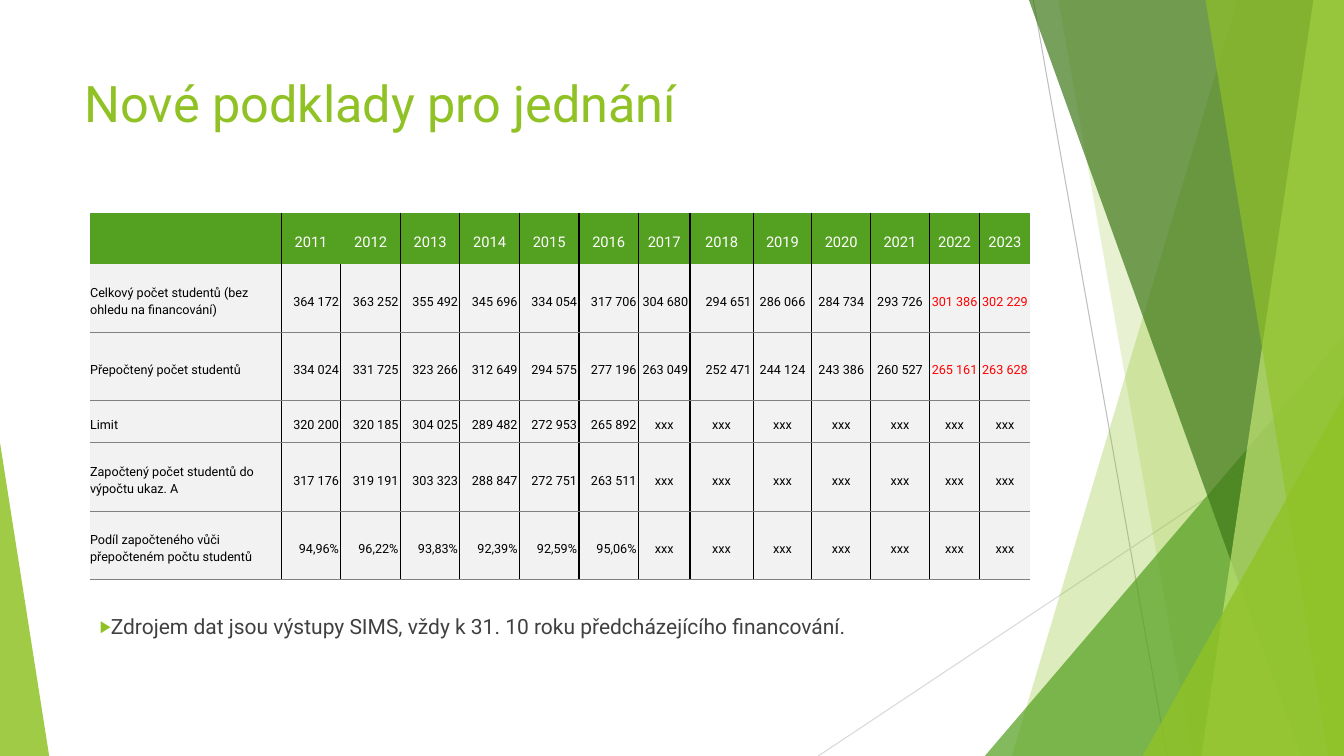
from lxml import etree
from pptx import Presentation
from pptx.dml.color import RGBColor
from pptx.enum.shapes import MSO_CONNECTOR, MSO_SHAPE
from pptx.enum.text import MSO_ANCHOR, MSO_AUTO_SIZE, PP_ALIGN
from pptx.oxml.ns import qn
from pptx.util import Cm, Pt

STRAIGHT = MSO_CONNECTOR.STRAIGHT
TRIANGLE = MSO_SHAPE.ISOSCELES_TRIANGLE
TOP, MIDDLE = MSO_ANCHOR.TOP, MSO_ANCHOR.MIDDLE
NO_AUTOSIZE = MSO_AUTO_SIZE.NONE
LEFT, CENTER, RIGHT = PP_ALIGN.LEFT, PP_ALIGN.CENTER, PP_ALIGN.RIGHT

FONT = "Roboto"
LIME, GREEN, DARK_GREEN, PALE_GREEN = "90C226", "54A021", "3F7819", "C0E474"
BLACK, RED, WHITE, GRAY, LIGHT_GRAY = "000000", "FF0000", "FFFFFF", "808080", "F2F2F2"
NO_GRID_STYLE = "{2D5ABB26-0587-4C30-8999-92F81FD0307C}"
SLIDE_WIDTH, SLIDE_HEIGHT = 33.87, 19.05

TITLE = "Nové podklady pro jednání"
SOURCE_NOTE = "Zdrojem dat jsou výstupy SIMS, vždy k 31. 10 roku předcházejícího financování."

YEARS = list(range(2011, 2024))
NOT_GIVEN = ["xxx"] * 7
STUDENT_ROWS = [
    ("Celkový počet studentů (bez ohledu na financování)",
     ["364 172", "363 252", "355 492", "345 696", "334 054", "317 706", "304 680",
      "294 651", "286 066", "284 734", "293 726", "301 386", "302 229"]),
    ("Přepočtený počet studentů",
     ["334 024", "331 725", "323 266", "312 649", "294 575", "277 196", "263 049",
      "252 471", "244 124", "243 386", "260 527", "265 161", "263 628"]),
    ("Limit",
     ["320 200", "320 185", "304 025", "289 482", "272 953", "265 892"] + NOT_GIVEN),
    ("Započtený počet studentů do výpočtu ukaz. A",
     ["317 176", "319 191", "303 323", "288 847", "272 751", "263 511"] + NOT_GIVEN),
    ("Podíl započteného vůči přepočteném počtu studentů",
     ["94,96%", "96,22%", "93,83%", "92,39%", "92,59%", "95,06%"] + NOT_GIVEN),
]
COLUMN_WIDTHS = [4.82] + [1.5] * 6 + [1.3, 1.59] + [1.48] * 3 + [1.27] * 2
ROW_HEIGHTS = [1.28, 1.72, 1.73, 1.06, 1.72, 1.72]
TABLE_LEFT, TABLE_TOP = 2.27, 5.37

# Start x, start y, end x, end y, colour
THIN_LINES = [
    (26.04, 0, 29.41, SLIDE_HEIGHT, "BFBFBF"),
    (SLIDE_WIDTH, 10.24, 20.62, SLIDE_HEIGHT, "D9D9D9"),
]
# Bands run to the right edge: (top x, bottom x).
# Wedges stand on the bottom edge: (left, top, right, apex position).
DECORATIONS = [
    ("band", (31.19, 25.5), LIME, 30),
    ("band", (26.67, 30.05), LIME, 20),
    ("wedge", (24.82, 8.46, SLIDE_WIDTH, 1), GREEN, 72),
    ("band", (25.93, 32.79), DARK_GREEN, 70),
    ("band", (33.1, 30.28), PALE_GREEN, 70),
    ("band", (30.38, 33.48), LIME, 65),
    ("wedge", (28.8, 9.98, SLIDE_WIDTH, 1), LIME, 80),
    ("wedge", (0, 11.15, 1.24, 0), LIME, 85),
]


def rgb(value):
    return RGBColor.from_string(value)


def format_runs(paragraph, size, color):
    for run in paragraph.runs:
        run.font.name = FONT
        run.font.size = Pt(size)
        run.font.color.rgb = rgb(color)


def add_line(shapes, x1, y1, x2, y2, color):
    line = shapes.add_connector(STRAIGHT, Cm(x1), Cm(y1), Cm(x2), Cm(y2))
    line.line.color.rgb = rgb(color)
    line.line.width = Pt(0.75)
    etree.SubElement(line._element.spPr, qn("a:effectLst"))


def add_band(shapes, top_x, bottom_x):
    builder = shapes.build_freeform(Cm(top_x), 0)
    corners = [(SLIDE_WIDTH, 0), (SLIDE_WIDTH, SLIDE_HEIGHT), (bottom_x, SLIDE_HEIGHT)]
    builder.add_line_segments([(Cm(x), Cm(y)) for x, y in corners], close=True)
    return builder.convert_to_shape()


def add_wedge(shapes, left, top, right, apex):
    wedge = shapes.add_shape(TRIANGLE, Cm(left), Cm(top),
                             Cm(right - left), Cm(SLIDE_HEIGHT - top))
    wedge.adjustments[0] = apex
    return wedge


def add_decoration(shapes, kind, geometry, color, opacity):
    shape = {"band": add_band, "wedge": add_wedge}[kind](shapes, *geometry)
    shape.shadow.inherit = False
    shape.line.fill.background()
    shape.fill.solid()
    shape.fill.fore_color.rgb = rgb(color)
    color_element = shape._element.spPr.find(qn("a:solidFill"))[0]
    etree.SubElement(color_element, qn("a:alpha"), val=str(opacity * 1000))


def place_placeholder(placeholder, left, top, width, height, text, size, color):
    placeholder.left, placeholder.top = Cm(left), Cm(top)
    placeholder.width, placeholder.height = Cm(width), Cm(height)
    frame = placeholder.text_frame
    frame.text = text
    frame.word_wrap = True
    frame.auto_size = NO_AUTOSIZE
    frame.vertical_anchor = TOP
    paragraph = frame.paragraphs[0]
    paragraph.alignment = LEFT
    format_runs(paragraph, size, color)
    return paragraph


def set_bullet(paragraph, character, color, percent):
    properties = paragraph._p.get_or_add_pPr()
    properties.set("marL", "0")
    properties.set("indent", "0")
    bullet_color = etree.SubElement(properties, qn("a:buClr"))
    etree.SubElement(bullet_color, qn("a:srgbClr"), val=color)
    etree.SubElement(properties, qn("a:buSzPct"), val=str(percent * 1000))
    etree.SubElement(properties, qn("a:buChar"), char=character)


def set_border(cell, side, width, color):
    """Draw one side (L, R, T or B) of a cell; no colour means no line."""
    border = etree.SubElement(cell._tc.get_or_add_tcPr(), qn("a:ln" + side),
                              w=str(Pt(width)))
    if color:
        fill = etree.SubElement(border, qn("a:solidFill"))
        etree.SubElement(fill, qn("a:srgbClr"), val=color)
    else:
        etree.SubElement(border, qn("a:noFill"))


def format_cell(cell, row, column, text):
    is_header = row == 0
    year = YEARS[column - 1] if column else None
    is_number = not is_header and column > 0 and text != "xxx"
    is_right = is_number and year <= 2018

    # The header has no line between 2011 and 2012.
    has_left = column > 0 and not (is_header and year == 2012)
    has_right = column < len(YEARS) and not (is_header and year == 2011)
    set_border(cell, "L", 1, BLACK if has_left else None)
    set_border(cell, "R", 1, BLACK if has_right else None)
    set_border(cell, "T", 0.75, GRAY if row > 1 else None)
    set_border(cell, "B", 0.75, None if is_header else GRAY)
    cell.fill.solid()
    cell.fill.fore_color.rgb = rgb(GREEN if is_header else LIGHT_GRAY)

    cell.vertical_anchor = MIDDLE
    cell.margin_left = cell.margin_bottom = 0
    cell.margin_top = Cm(0.13)
    cell.margin_right = Cm(0.05 if is_right else 0)
    cell.text_frame.text = text
    paragraph = cell.text_frame.paragraphs[0]
    paragraph.alignment = LEFT if column == 0 else RIGHT if is_right else CENTER
    paragraph.line_spacing = 1.15
    paragraph.space_after = Pt(10)
    color = WHITE if is_header else RED if is_number and year >= 2022 else BLACK
    format_runs(paragraph, 10.5 if is_header else 9, color)


def add_student_table(shapes):
    rows = [[""] + [str(year) for year in YEARS]]
    rows += [[label] + values for label, values in STUDENT_ROWS]
    frame = shapes.add_table(len(rows), len(rows[0]), Cm(TABLE_LEFT), Cm(TABLE_TOP),
                             Cm(sum(COLUMN_WIDTHS)), Cm(sum(ROW_HEIGHTS)))
    table = frame.table
    table.horz_banding = False
    table._tbl.tblPr.find(qn("a:tableStyleId")).text = NO_GRID_STYLE
    for column, width in zip(table.columns, COLUMN_WIDTHS):
        column.width = Cm(width)
    for row_index, (values, height) in enumerate(zip(rows, ROW_HEIGHTS)):
        table.rows[row_index].height = Cm(height)
        for column_index, text in enumerate(values):
            format_cell(table.cell(row_index, column_index), row_index, column_index, text)


def main():
    presentation = Presentation()
    presentation.slide_width, presentation.slide_height = Cm(SLIDE_WIDTH), Cm(SLIDE_HEIGHT)
    slide = presentation.slides.add_slide(presentation.slide_layouts[1])
    shapes = slide.shapes
    title, body = shapes.title, slide.placeholders[1]

    for line in THIN_LINES:
        add_line(shapes, *line)
    for decoration in DECORATIONS:
        add_decoration(shapes, *decoration)

    place_placeholder(title, 1.88, 1.7, 23.88, 3.66, TITLE, 36, LIME)
    note = place_placeholder(body, 2.26, 15.34, 23.67, 1.45, SOURCE_NOTE, 15, "404040")
    note.space_before = Pt(10)
    set_bullet(note, "▶", LIME, 80)
    for placeholder in (title, body):
        shapes._spTree.append(placeholder._element)  # in front of the decorations
    add_student_table(shapes)
    presentation.save("out.pptx")


if __name__ == "__main__":
    main()
